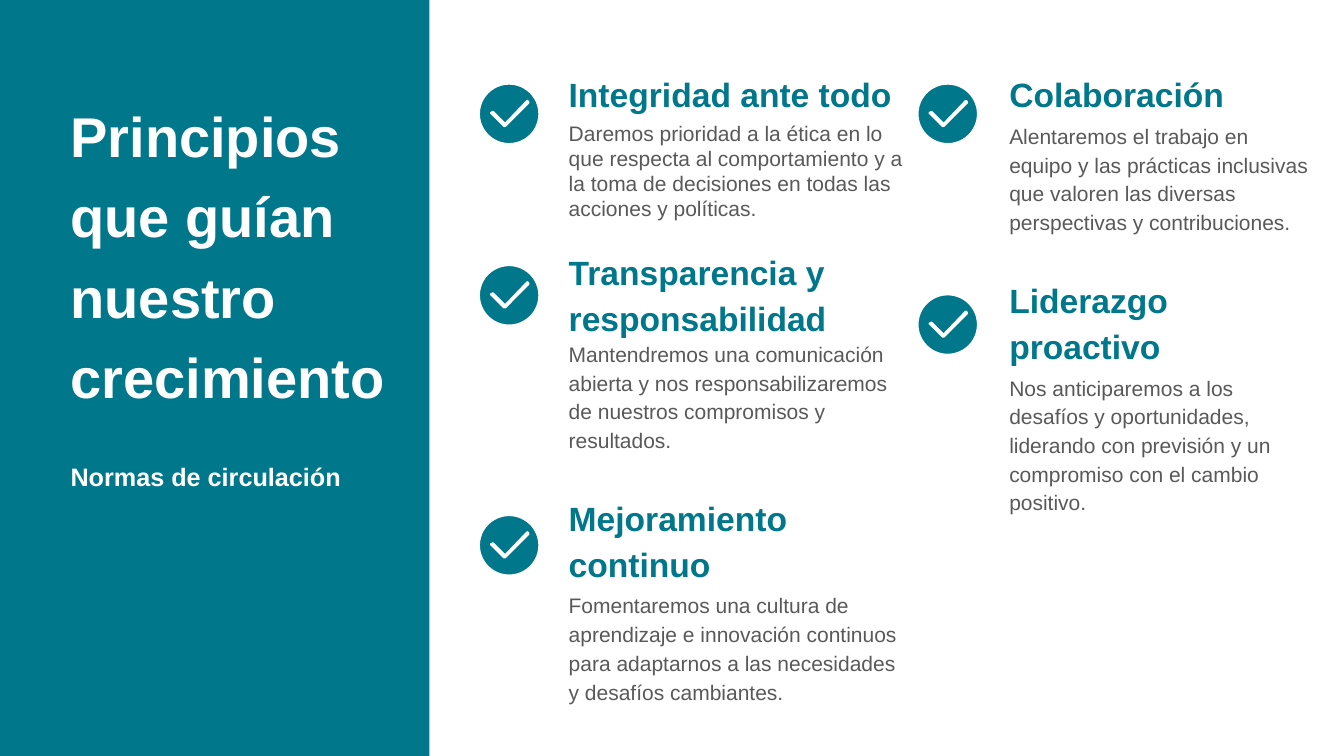
from pptx import Presentation
from pptx import util as u
from pptx.dml.color import RGBColor
from pptx.enum import shapes, text

LOOK = {
    "teal": RGBColor.from_string("00778B"),
    "white": RGBColor.from_string("FFFFFF"),
    "gray": RGBColor.from_string("595959"),
    "font": "Arial",
    "title": 40, "sub": 18, "head": 24, "body": 15,
}

INTRO = [
    ([("Principios que guían nuestro crecimiento", "title", "white", True)], 1.2, 32),
    ([("Normas de circulación", "sub", "white", True)], 1.2, 32),
]


def head(words):
    return [(words, "head", "teal", True)], 1.14, 4


def body(words, lead=1.14, after=28):
    return [(words, "body", "gray", False)], lead, after


LEFT = [
    head("Integridad ante todo"),
    body("Daremos prioridad a la ética en lo que respecta al comportamiento y a la "
         "toma de decisiones en todas las acciones y políticas.", 1, 18),
    ([("Transparencia y responsabilidad\v", "head", "teal", True),
      ("Mantendremos una comunicación abierta y nos responsabilizaremos de nuestros "
       "compromisos y resultados.", "body", "gray", False)], 1.14, 28),
    head("Mejoramiento continuo"),
    body("Fomentaremos una cultura de aprendizaje e innovación continuos para "
         "adaptarnos a las necesidades y desafíos cambiantes."),
]
RIGHT = [
    head("Colaboración"),
    body("Alentaremos el trabajo en equipo y las prácticas inclusivas que valoren "
         "las diversas perspectivas y contribuciones."),
    head("Liderazgo proactivo"),
    body("Nos anticiparemos a los desafíos y oportunidades, liderando con previsión "
         "y un compromiso con el cambio positivo."),
]
BLOCKS = [
    (INTRO, (0.67, 0.84, 3.2, 3.26), 0.03),
    (LEFT, (5.64, 0.68, 3.35, 7.08), 0),
    (RIGHT, (10.01, 0.68, 2.99, 5.13), 0),
]
BADGES = {4.75: [0.83, 2.63, 5.11], 9.1: [0.83, 2.92]}
SIZE = 0.6
TICK = [(0.49, 0.18), (0.48, 0.17), (0.26, 0.4), (0.14, 0.28),
        (0.12, 0.29), (0.25, 0.42), (0.26, 0.42), (0.49, 0.19)]


def put(obj, vals):
    for name, val in vals.items():
        setattr(obj, name, val)


def paint(shape, edge=None):
    shape.shadow.inherit = False
    shape.fill.solid()
    shape.fill.fore_color.rgb = LOOK["teal"]
    if edge:
        shape.line.color.rgb = edge
        shape.line.width = u.Pt(1.5)
    else:
        shape.line.fill.background()


def write(slide, paras, box, inset):
    frame = slide.shapes.add_textbox(*map(u.Inches, box)).text_frame
    pad = u.Inches(inset)
    put(frame, {"word_wrap": True, "auto_size": text.MSO_AUTO_SIZE.SHAPE_TO_FIT_TEXT,
                "margin_left": pad, "margin_right": pad,
                "margin_top": pad, "margin_bottom": pad})
    for i, (runs, lead, after) in enumerate(paras):
        para = frame.add_paragraph() if i else frame.paragraphs[0]
        put(para, {"line_spacing": lead, "space_after": u.Pt(after)})
        for words, size, tint, bold in runs:
            run = para.add_run()
            run.text = words.rstrip("\v")
            put(run.font, {"name": LOOK["font"], "size": u.Pt(LOOK[size]), "bold": bold})
            run.font.color.rgb = LOOK[tint]
            if words.endswith("\v"):
                para.add_line_break()


def badge(slide, left, top):
    group = slide.shapes.add_group_shape().shapes
    disc = group.add_shape(shapes.MSO_SHAPE.OVAL,
                           *map(u.Inches, (left, top, SIZE, SIZE)))
    paint(disc, LOOK["white"])
    dots = [(u.Inches(left + x), u.Inches(top + y)) for x, y in TICK]
    pen = group.build_freeform(*dots[0])
    pen.add_line_segments(dots[1:], close=True)
    paint(pen.convert_to_shape(), LOOK["white"])


def main():
    deck = Presentation()
    put(deck, {"slide_width": u.Inches(13.33), "slide_height": u.Inches(7.5)})
    slide = deck.slides.add_slide(deck.slide_layouts[6])
    panel = slide.shapes.add_shape(shapes.MSO_SHAPE.RECTANGLE,
                                   *map(u.Inches, (0, 0, 4.26, 7.5)))
    paint(panel)
    for block in BLOCKS:
        write(slide, *block)
    for left, tops in BADGES.items():
        for top in tops:
            badge(slide, left, top)
    deck.save("out.pptx")


if __name__ == "__main__":
    main()
